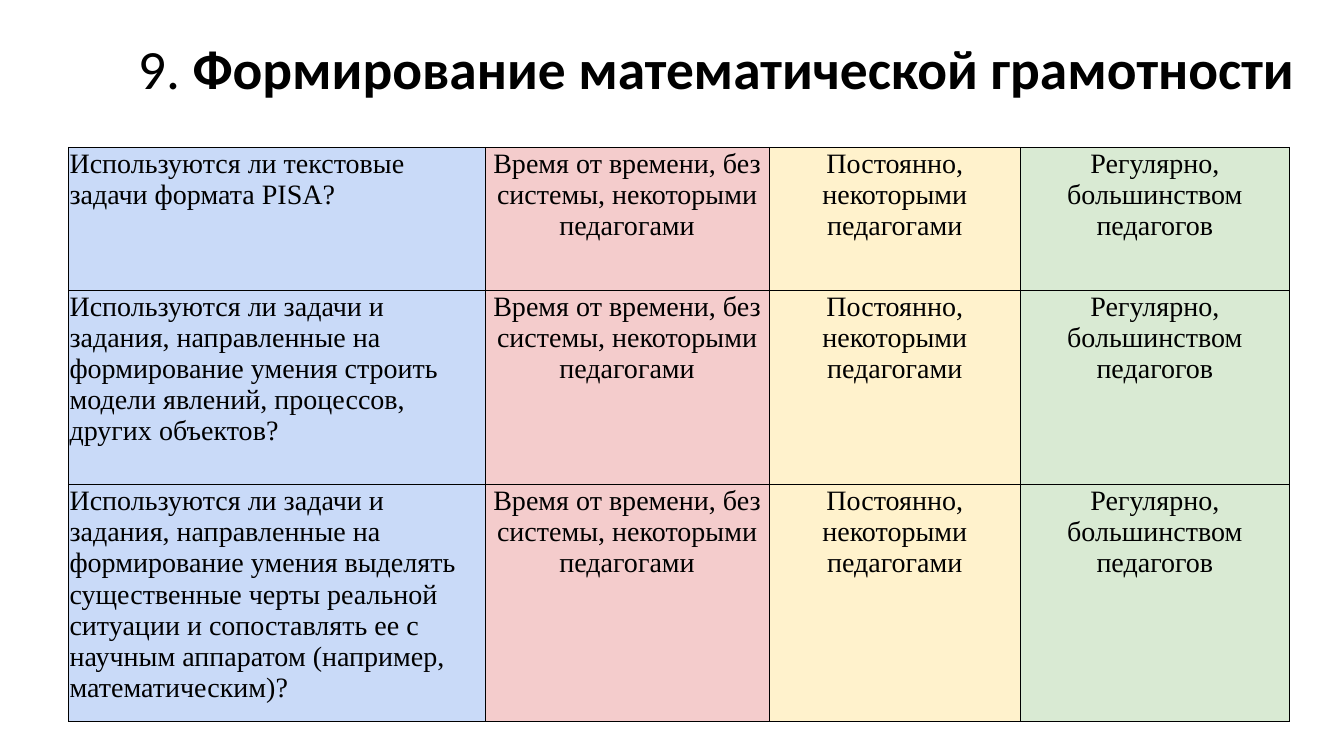
from lxml import etree
from pptx import Presentation
from pptx import util as u
from pptx.dml.color import RGBColor
from pptx.enum import text
from pptx.oxml import ns

BLACK = RGBColor(0x00, 0x00, 0x00)
BLUE = RGBColor(0xC9, 0xDA, 0xF8)
RED = RGBColor(0xF4, 0xCC, 0xCC)
YELLOW = RGBColor(0xFF, 0xF2, 0xCC)
GREEN = RGBColor(0xD9, 0xEA, 0xD3)

HEADING = [("9. ", False), ("Формирование математической грамотности", True)]
QUESTIONS = [
    ("Используются ли текстовые задачи формата PISA?", 1.42),
    ("Используются ли задачи и задания, направленные на формирование умения "
     "строить модели явлений, процессов, других объектов?", 1.93),
    ("Используются ли задачи и задания, направленные на формирование умения "
     "выделять существенные черты реальной ситуации и сопоставлять ее с "
     "научным аппаратом (например, математическим)?", 2.29),
]
ANSWERS = [
    "Время от времени, без системы, некоторыми педагогами",
    "Постоянно, некоторыми педагогами",
    "Регулярно, большинством педагогов",
]
COLUMNS = [(4.13, BLUE), (2.82, RED), (2.49, YELLOW), (2.67, GREEN)]


def add_run(paragraph, words, font, size, bold=False):
    run = paragraph.add_run()
    run.text = words
    run.font.name = font
    run.font.size = u.Pt(size)
    run.font.bold = bold
    run.font.color.rgb = BLACK


def add_borders(cell):
    properties = cell._tc.get_or_add_tcPr()
    for side in ("lnL", "lnR", "lnT", "lnB"):
        border = etree.SubElement(properties, ns.qn(f"a:{side}"), w=str(u.Pt(0.5)))
        fill = etree.SubElement(border, ns.qn("a:solidFill"))
        etree.SubElement(fill, ns.qn("a:srgbClr"), val=str(BLACK))


def fill_cell(cell, words, colour, align):
    add_borders(cell)
    cell.fill.solid()
    cell.fill.fore_color.rgb = colour
    cell.margin_left = cell.margin_right = cell.margin_top = u.Inches(0.01)
    cell.margin_bottom = 0
    cell.vertical_anchor = text.MSO_ANCHOR.TOP
    paragraph = cell.text_frame.paragraphs[0]
    paragraph.alignment = align
    add_run(paragraph, words, "Times New Roman", 20)


def add_heading(slide):
    heading = slide.shapes.add_textbox(
        u.Inches(1.27), u.Inches(0.4), u.Inches(11.8), u.Inches(0.61))
    frame = heading.text_frame
    frame.word_wrap = True
    frame.vertical_anchor = text.MSO_ANCHOR.MIDDLE
    paragraph = frame.paragraphs[0]
    paragraph.line_spacing = 0.9
    for words, bold in HEADING:
        add_run(paragraph, words, "Calibri", 39.6, bold)


def add_survey(slide):
    width = sum(column[0] for column in COLUMNS)
    height = sum(question[1] for question in QUESTIONS)
    survey = slide.shapes.add_table(
        len(QUESTIONS), len(COLUMNS),
        u.Inches(0.68), u.Inches(1.46), u.Inches(width), u.Inches(height)).table
    survey.first_row = survey.horz_banding = False
    for column, (column_width, _) in zip(survey.columns, COLUMNS):
        column.width = u.Inches(column_width)
    for row, (question, row_height) in zip(survey.rows, QUESTIONS):
        row.height = u.Inches(row_height)
        for i, (cell, words) in enumerate(zip(row.cells, [question, *ANSWERS])):
            align = text.PP_ALIGN.CENTER if i else text.PP_ALIGN.LEFT
            fill_cell(cell, words, COLUMNS[i][1], align)


def main():
    deck = Presentation()
    deck.slide_width, deck.slide_height = u.Inches(13.33), u.Inches(7.5)
    slide = deck.slides.add_slide(deck.slide_layouts[6])
    add_heading(slide)
    add_survey(slide)
    deck.save("out.pptx")


if __name__ == "__main__":
    main()
